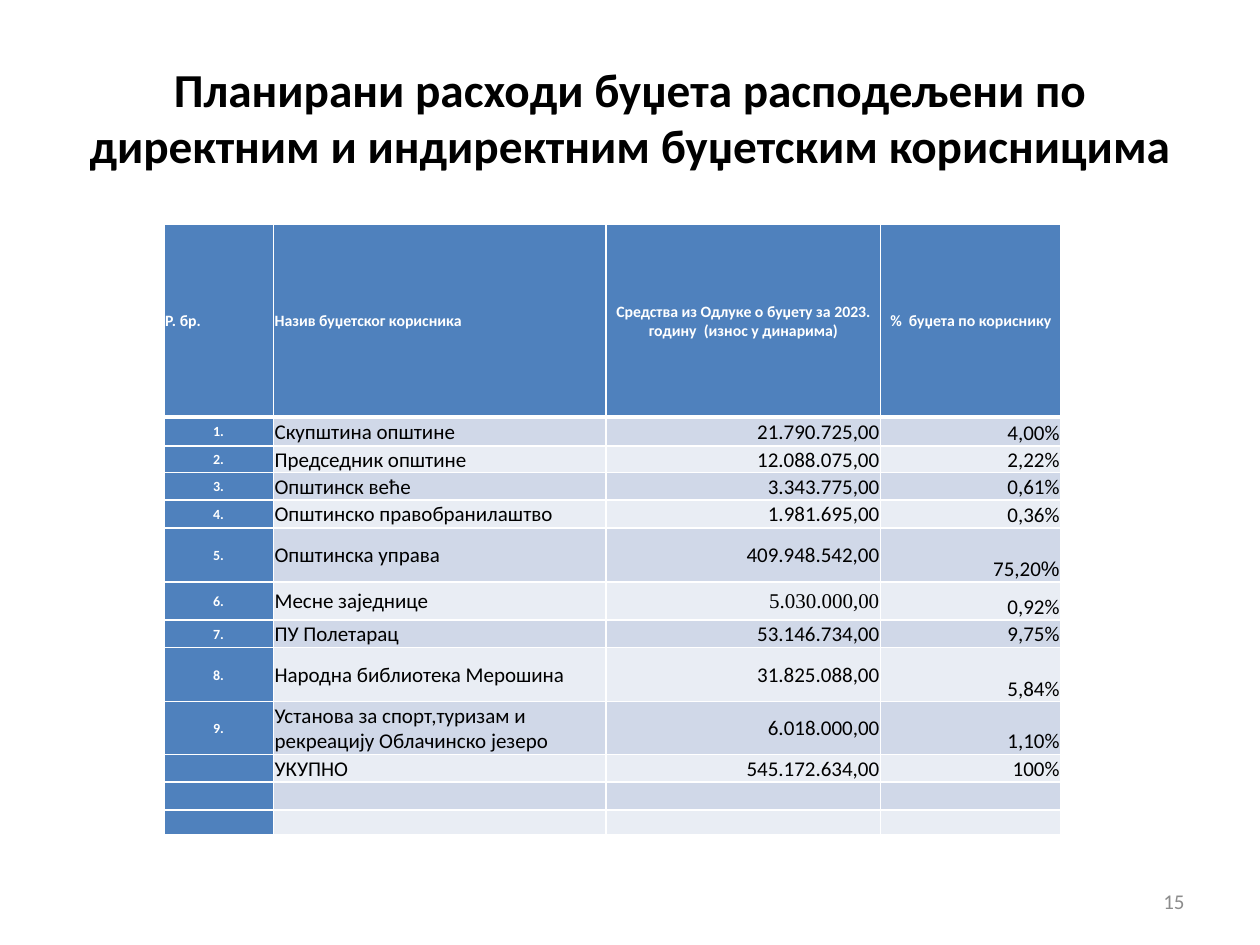
import pptx
import pptx.util
import pptx.dml.color
import pptx.enum.text
import pptx.oxml.ns
import lxml.etree

Inches, Pt = pptx.util.Inches, pptx.util.Pt
RGB = pptx.dml.color.RGBColor.from_string
ALIGN = pptx.enum.text.PP_ALIGN
ANCHOR = pptx.enum.text.MSO_ANCHOR
qn = pptx.oxml.ns.qn

# Content
TITLE = "Планирани расходи буџета расподељени по директним и индиректним буџетским корисницима"
PAGE = "15"
HEADER = ("Р. бр.", "Назив буџетског корисника",
          "Средства из Одлуке о буџету за 2023. годину  (износ у динарима)",
          "%  буџета по кориснику")
USERS = [
    ("1.", "Скупштина општине", "21.790.725,00", "4,00%"),
    ("2.", "Председник општине", "12.088.075,00", "2,22%"),
    ("3.", "Општинск веће", "3.343.775,00", "0,61%"),
    ("4.", "Општинско правобранилаштво", "1.981.695,00", "0,36%"),
    ("5.", "Општинска управа", "409.948.542,00", ("75,20", "%")),
    ("6.", "Месне заједнице", "5.030.000,00", "0,92%"),
    ("7.", "ПУ Полетарац", "53.146.734,00", "9,75%"),
    ("8.", "Народна библиотека Мерошина", "31.825.088,00", "5,84%"),
    ("9.", "Установа за спорт,туризам и рекреацију Облачинско језеро", "6.018.000,00", "1,10%"),
    ("", "УКУПНО", "545.172.634,00", "100%"),
    ("",) * 4,
    ("",) * 4,
]
COLS = [0.87, 2.64, 2.18, 1.43]
ROWS = [1.53, 0.23, 0.21, 0.22, 0.22, 0.43, 0.3, 0.22, 0.43, 0.42, 0.22, 0.22, 0.2]

THEME = {
    "font": "Calibri", "black": "000000", "white": "FFFFFF", "grey": "8C8C8C",
    "blue": "4F81BD", "bands": ("D0D8E8", "E9EDF4"),
    "title": 27, "page": 12, "header": 9, "number": 8, "body": 12, "empty": 10,
}
# Runs set in another font: (row, column, run)
OTHER_FONTS = {(5, 3, 1): "Arial", (6, 2, 0): "Times New Roman"}

HEADER_ALIGN = (ALIGN.LEFT, ALIGN.LEFT, ALIGN.CENTER, ALIGN.CENTER)
BODY_ALIGN = (ALIGN.CENTER, ALIGN.LEFT, ALIGN.RIGHT, ALIGN.RIGHT)


def set_all(obj, values):
    for name, value in values.items():
        setattr(obj, name, value)


def add_run(p, text, size, color, bold=False, font=THEME["font"]):
    r = p.add_run()
    r.text = text
    set_all(r.font, {"size": Pt(size), "bold": bold, "name": font})
    r.font.color.rgb = RGB(color)


def add_text(slide, box, text, align, size, color, bold=False):
    tf = slide.shapes.add_textbox(*map(Inches, box)).text_frame
    set_all(tf, {"word_wrap": True, "vertical_anchor": ANCHOR.MIDDLE})
    tf.paragraphs[0].alignment = align
    add_run(tf.paragraphs[0], text, size, color, bold)


def add_borders(cell, widths):
    tc_pr = cell._tc.get_or_add_tcPr()
    for side, width in widths.items():
        ln = lxml.etree.SubElement(tc_pr, qn("a:ln" + side), w=str(Pt(width)))
        fill = lxml.etree.SubElement(ln, qn("a:solidFill"))
        lxml.etree.SubElement(fill, qn("a:srgbClr"), val=THEME["white"])


def fill_cell(cell, row, col, content):
    head, number = row == 0, col == 0
    add_borders(cell, {"L": 1, "R": 1, "T": 3 if row == 1 else 1, "B": 3 if head else 1})
    cell.fill.solid()
    cell.fill.fore_color.rgb = RGB(
        THEME["blue"] if head or number else THEME["bands"][(row - 1) % 2])
    set_all(cell, {
        "margin_left": Inches(0.01), "margin_right": Inches(0.01),
        "margin_top": Inches(0.01), "margin_bottom": 0,
        "vertical_anchor": ANCHOR.BOTTOM if col == 3 and not head else ANCHOR.MIDDLE,
    })
    p = cell.text_frame.paragraphs[0]
    p.alignment = (HEADER_ALIGN if head else BODY_ALIGN)[col]
    if not content:  # keeps an empty row from growing
        lxml.etree.SubElement(p._p, qn("a:endParaRPr"), sz=str(THEME["empty"] * 100))
        return
    size = THEME["header" if head else "number" if number else "body"]
    color = THEME["white" if head or number else "black"]
    for i, text in enumerate((content,) if isinstance(content, str) else content):
        add_run(p, text, size, color, head or number,
                OTHER_FONTS.get((row, col, i), THEME["font"]))


def main():
    prs = pptx.Presentation()
    set_all(prs, {"slide_width": Inches(10), "slide_height": Inches(7.5)})
    s = prs.slides.add_slide(prs.slide_layouts[6])

    # Title and page number
    add_text(s, (0.5, 0.3, 9, 1.25), TITLE, ALIGN.CENTER, THEME["title"], THEME["black"], True)
    add_text(s, (7.17, 6.95, 2.33, 0.4), PAGE, ALIGN.RIGHT, THEME["page"], THEME["grey"])

    # Budget table
    table = s.shapes.add_table(len(ROWS), len(COLS), Inches(1.3), Inches(1.78),
                               Inches(sum(COLS)), Inches(sum(ROWS))).table
    for column, width in zip(table.columns, COLS):
        column.width = Inches(width)
    for row, height in zip(table.rows, ROWS):
        row.height = Inches(height)
    for i, values in enumerate([HEADER] + USERS):
        for j, content in enumerate(values):
            fill_cell(table.cell(i, j), i, j, content)

    prs.save("out.pptx")


if __name__ == "__main__":
    main()
